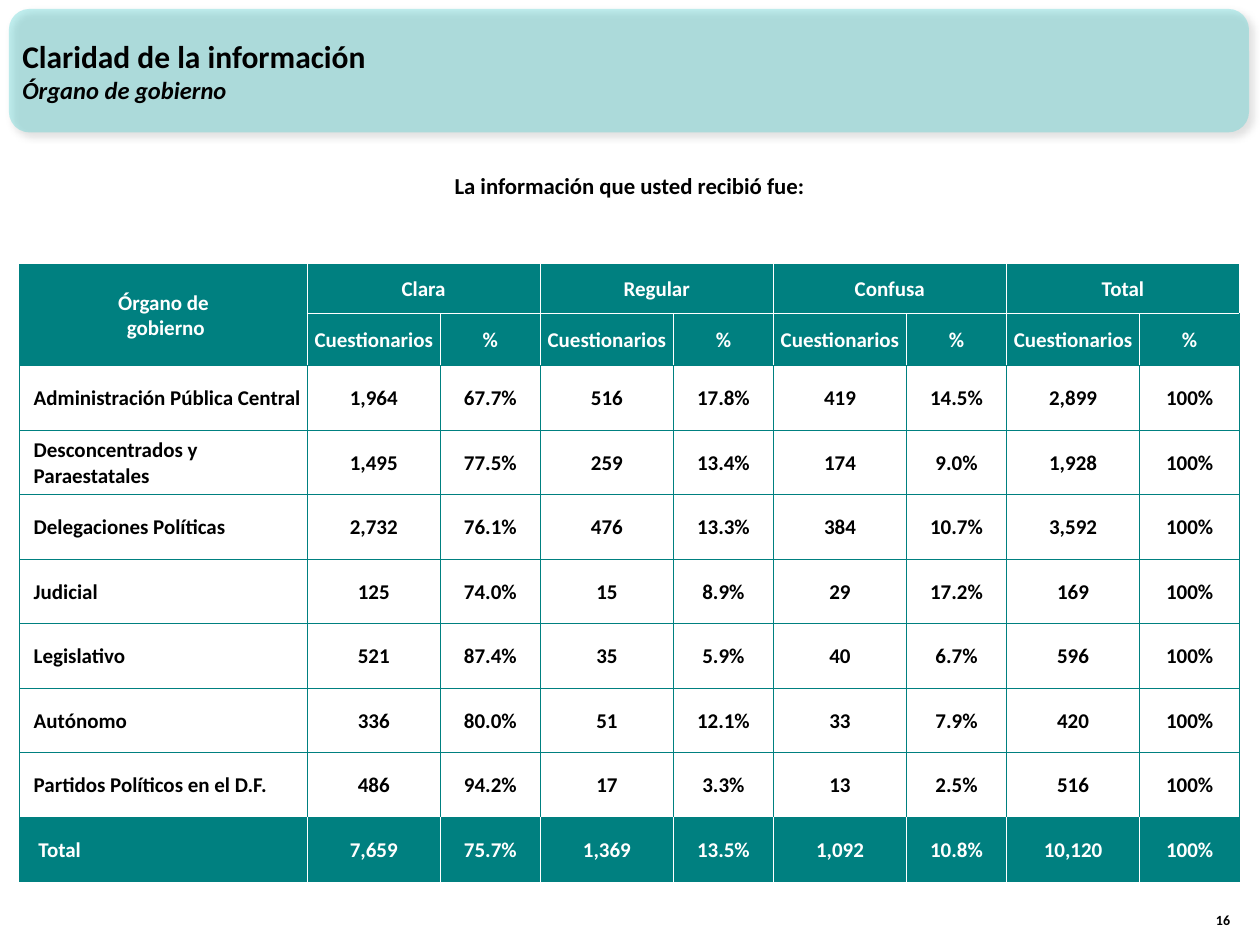
import lxml.etree
import pptx
import pptx.dml.color
import pptx.enum.shapes
import pptx.enum.text
import pptx.oxml.ns
import pptx.util

Cm = pptx.util.Cm
Pt = pptx.util.Pt
qn = pptx.oxml.ns.qn
ALIGN = pptx.enum.text.PP_ALIGN
ANCHOR = pptx.enum.text.MSO_ANCHOR
BLACK = pptx.dml.color.RGBColor(0x00, 0x00, 0x00)
WHITE = pptx.dml.color.RGBColor(0xFF, 0xFF, 0xFF)
TEAL = pptx.dml.color.RGBColor(0x00, 0x80, 0x80)
AQUA = pptx.dml.color.RGBColor(0x33, 0xCC, 0xCC)


def write_text(frame, text, size, color, align):
    frame.text = text
    for paragraph in frame.paragraphs:
        paragraph.alignment = align
        for run in paragraph.runs:
            run.font.name = "Calibri"
            run.font.size = Pt(size)
            run.font.bold = True
            run.font.color.rgb = color


def add_border(cell, side, color):
    line = lxml.etree.SubElement(cell._tc.get_or_add_tcPr(), qn("a:" + side), w=str(Pt(0.5)))
    fill = lxml.etree.SubElement(line, qn("a:solidFill"))
    lxml.etree.SubElement(fill, qn("a:srgbClr"), val=str(color))


presentation = pptx.Presentation()
presentation.slide_width = Cm(25.4)
presentation.slide_height = Cm(19.05)
slide = presentation.slides.add_slide(presentation.slide_layouts[6])

banner = slide.shapes.add_shape(
    pptx.enum.shapes.MSO_SHAPE.ROUNDED_RECTANGLE, Cm(0.18), Cm(0.18), Cm(25), Cm(2.49)
)
banner.fill.solid()
banner.fill.fore_color.rgb = AQUA
banner.line.fill.background()
banner.shadow.inherit = False
banner_color = banner._element.spPr.find(qn("a:solidFill")).find(qn("a:srgbClr"))
lxml.etree.SubElement(banner_color, qn("a:alpha"), val="30000")
banner_shadow = lxml.etree.SubElement(
    banner._element.spPr.find(qn("a:effectLst")), qn("a:outerShdw"),
    blurRad=str(Pt(4)), dist=str(Pt(3)), dir="2700000", algn="tl", rotWithShape="0",
)
shadow_color = lxml.etree.SubElement(banner_shadow, qn("a:srgbClr"), val=str(BLACK))
lxml.etree.SubElement(shadow_color, qn("a:alpha"), val="40000")

heading = slide.shapes.add_textbox(Cm(0.2), Cm(0.23), Cm(23.29), Cm(2.39)).text_frame
question = slide.shapes.add_textbox(Cm(2.26), Cm(3.33), Cm(20.85), Cm(0.81)).text_frame
page_number = slide.shapes.add_textbox(Cm(24.03), Cm(17.81), Cm(1.02), Cm(1.02)).text_frame
for frame, text, size, align, anchor in [
    (heading, "Claridad de la información\nÓrgano de gobierno", 18, ALIGN.LEFT, ANCHOR.MIDDLE),
    (question, "La información que usted recibió fue:", 13, ALIGN.CENTER, ANCHOR.TOP),
    (page_number, "16", 8, ALIGN.RIGHT, ANCHOR.BOTTOM),
]:
    frame.word_wrap = True
    frame.vertical_anchor = anchor
    write_text(frame, text, size, BLACK, align)
subtitle = heading.paragraphs[1].runs[0]
subtitle.font.size = Pt(14)
subtitle.font.italic = True

answers = ["Clara", "Regular", "Confusa", "Total"]
rows = [
    ["Órgano de\n gobierno"] + [text for answer in answers for text in (answer, "")],
    [""] + ["Cuestionarios", "%"] * len(answers),
    ["Administración Pública Central", "1,964", "67.7%", "516", "17.8%", "419", "14.5%", "2,899", "100%"],
    ["Desconcentrados y Paraestatales", "1,495", "77.5%", "259", "13.4%", "174", "9.0%", "1,928", "100%"],
    ["Delegaciones Políticas", "2,732", "76.1%", "476", "13.3%", "384", "10.7%", "3,592", "100%"],
    ["Judicial", "125", "74.0%", "15", "8.9%", "29", "17.2%", "169", "100%"],
    ["Legislativo", "521", "87.4%", "35", "5.9%", "40", "6.7%", "596", "100%"],
    ["Autónomo", "336", "80.0%", "51", "12.1%", "33", "7.9%", "420", "100%"],
    ["Partidos Políticos en el D.F.", "486", "94.2%", "17", "3.3%", "13", "2.5%", "516", "100%"],
    [" Total", "7,659", "75.7%", "1,369", "13.5%", "1,092", "10.8%", "10,120", "100%"],
]
column_widths = [5.79] + [2.69, 2.01] * len(answers)
row_heights = [0.99, 1.05] + [1.3] * (len(rows) - 2)
last_row = len(rows) - 1
last_column = len(column_widths) - 1

results = slide.shapes.add_table(
    len(rows), len(column_widths), Cm(0.4), Cm(5.33), Cm(sum(column_widths)), Cm(sum(row_heights))
).table
results.first_row = False
results.horz_banding = False
for column, width in zip(results.columns, column_widths):
    column.width = Cm(width)
for row, height in zip(results.rows, row_heights):
    row.height = Cm(height)

for r, texts in enumerate(rows):
    for c, text in enumerate(texts):
        cell = results.cell(r, c)
        shaded = r < 2 or r == last_row
        cell.vertical_anchor = ANCHOR.MIDDLE
        cell.margin_left = cell.margin_right = cell.margin_top = Cm(0.03)
        cell.margin_bottom = 0
        add_border(cell, "lnL", WHITE if shaded and c > 0 else TEAL)
        add_border(cell, "lnR", WHITE if shaded and c < last_column else TEAL)
        add_border(cell, "lnT", WHITE if r == 1 and c > 0 else TEAL)
        add_border(cell, "lnB", WHITE if r == 0 and c > 0 else TEAL)
        if shaded:
            cell.fill.solid()
            cell.fill.fore_color.rgb = TEAL
        else:
            cell.fill.background()
        row_label = c == 0 and r > 1
        write_text(
            cell.text_frame, text, 12, WHITE if shaded else BLACK,
            ALIGN.LEFT if row_label else ALIGN.CENTER,
        )
        if row_label:
            cell.text_frame.paragraphs[0]._p.get_or_add_pPr().set("marL", str(Cm(0.25)))

results.cell(0, 0).merge(results.cell(1, 0))
for c in range(1, last_column, 2):
    results.cell(0, c).merge(results.cell(0, c + 1))

presentation.save("out.pptx")
